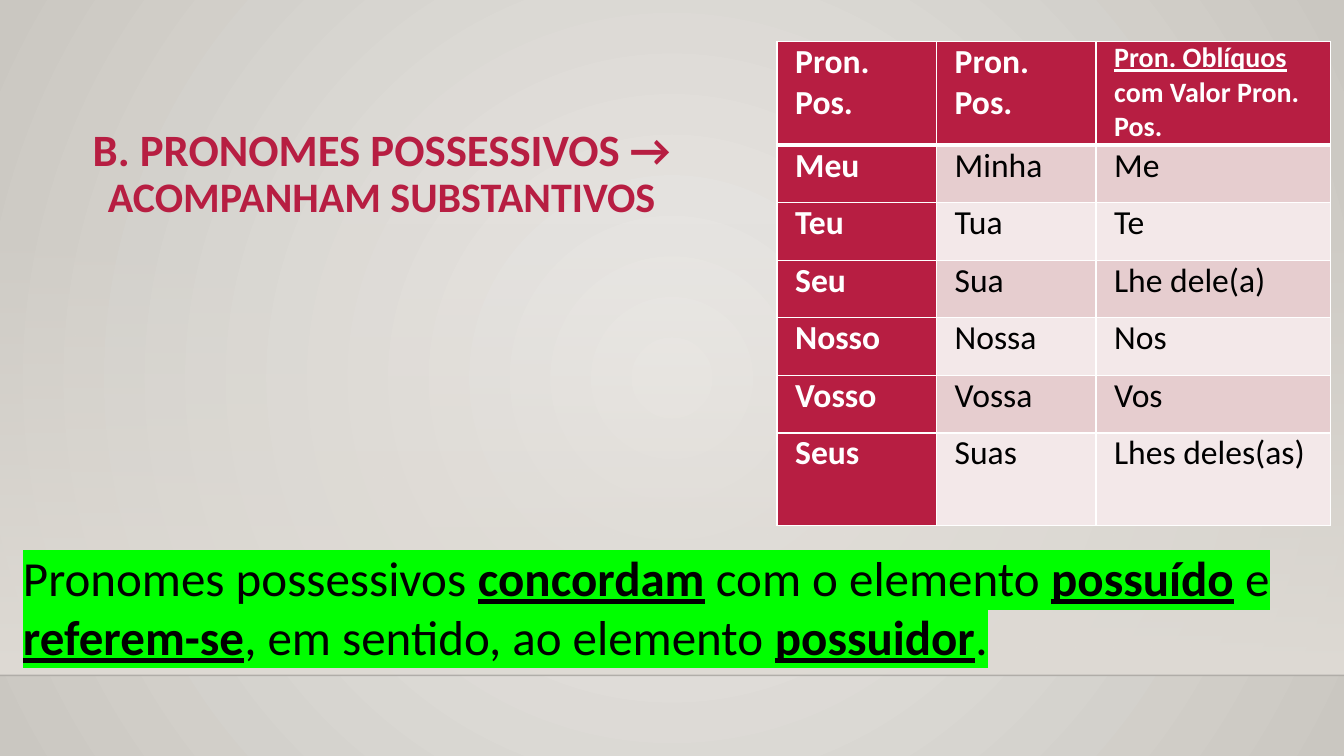
from dataclasses import dataclass

from lxml.etree import SubElement
from pptx import Presentation
from pptx.dml.color import RGBColor
from pptx.enum.shapes import MSO_CONNECTOR, MSO_SHAPE
from pptx.enum.text import MSO_ANCHOR, PP_ALIGN
from pptx.oxml.ns import qn
from pptx.util import Cm, Pt


@dataclass(frozen=True)
class Theme:
    font: str = "Calibri"
    crimson: str = "B71E42"
    white: str = "FFFFFF"
    black: str = "000000"
    marker: str = "00FF00"
    band_dark: str = "E6CDCF"
    band_light: str = "F3E8E9"
    glow: str = "ECEAE7"
    edge: str = "CAC7C1"
    floor: str = "DFDBD5"
    title_size: int = 32
    subtitle_size: int = 30
    rule_size: int = 35
    cell_size: int = 24
    small_size: int = 20


class SlideBuilder:
    def __init__(self, deck, theme):
        self.theme = theme
        self.page = deck.slides.add_slide(deck.slide_layouts[6])

    def gradient(self, fill, first, last):
        fill.gradient()
        for stop, color in zip(fill.gradient_stops, (first, last)):
            stop.color.rgb = RGBColor.from_string(color)

    def background(self):
        """Radial gradient spreading from the centre of the page."""
        self.gradient(self.page.background.fill, self.theme.glow, self.theme.edge)
        gradient = self.page.element.find(".//" + qn("a:gradFill"))
        gradient.remove(gradient.find(qn("a:lin")))
        circle = SubElement(gradient, qn("a:path"), path="circle")
        SubElement(circle, qn("a:fillToRect"), dict.fromkeys("ltrb", "50000"))

    def fading_floor(self, left, top, width, height):
        """Rectangle that fades in from transparent at its top."""
        floor = self.page.shapes.add_shape(
            MSO_SHAPE.RECTANGLE, Cm(left), Cm(top), Cm(width), Cm(height))
        floor.shadow.inherit = False
        floor.line.fill.background()
        self.gradient(floor.fill, self.theme.floor, self.theme.floor)
        floor.fill.gradient_angle = 270
        first_color = floor.element.spPr.find(".//" + qn("a:srgbClr"))
        SubElement(first_color, qn("a:alpha"), val="0")

    def faint_line(self, left, top, right):
        line = self.page.shapes.add_connector(
            MSO_CONNECTOR.STRAIGHT, Cm(left), Cm(top), Cm(right), Cm(top))
        line.line.width = Pt(1)
        line.line.color.rgb = RGBColor.from_string(self.theme.black)
        properties = line.element.spPr
        SubElement(properties.find(".//" + qn("a:srgbClr")), qn("a:alpha"), val="20000")
        SubElement(properties, qn("a:effectLst"))

    def span(self, para, text, size, color, bold=False, underline=False, marker=None):
        span = para.add_run()
        span.text = text
        font = span.font
        font.name, font.size = self.theme.font, Pt(size)
        font.bold, font.underline = bold, underline
        font.color.rgb = RGBColor.from_string(color)
        if marker:
            properties = span._r.get_or_add_rPr()
            highlight = SubElement(properties, qn("a:highlight"))
            SubElement(highlight, qn("a:srgbClr"), val=marker)
            properties.find(qn("a:solidFill")).addnext(highlight)

    def text_box(self, left, top, width, height, anchor=MSO_ANCHOR.TOP):
        """Add a wrapping box and return its first paragraph."""
        box = self.page.shapes.add_textbox(Cm(left), Cm(top), Cm(width), Cm(height))
        box.text_frame.word_wrap = True
        box.text_frame.vertical_anchor = anchor
        return box.text_frame.paragraphs[0]

    def title(self, spans, *place):
        para = self.text_box(*place, anchor=MSO_ANCHOR.MIDDLE)
        para.alignment = PP_ALIGN.CENTER
        para.line_spacing = 0.9
        for text, size in spans:
            self.span(para, text, size, self.theme.crimson, bold=True)

    def rule(self, spans, *place):
        """Highlighted sentence; its key words are bold and underlined."""
        para = self.text_box(*place)
        for text, key in spans:
            self.span(para, text, self.theme.rule_size, self.theme.black,
                      key, key, self.theme.marker)

    def cell(self, cell, spans, color, fill, bold, borders):
        cell.margin_left = cell.margin_right = Cm(0.46)
        cell.margin_top = cell.margin_bottom = 0
        properties = cell._tc.get_or_add_tcPr()
        for side, points in borders.items():
            border = SubElement(properties, qn(f"a:ln{side}"), w=str(Pt(points)))
            paint = SubElement(border, qn("a:solidFill"))
            SubElement(paint, qn("a:srgbClr"), val=self.theme.white)
        cell.fill.solid()
        cell.fill.fore_color.rgb = RGBColor.from_string(fill)
        for text, size, underline in spans:
            self.span(cell.text_frame.paragraphs[0], text, size, color, bold, underline)

    def table(self, header, rows, left, top, widths, heights):
        theme = self.theme
        table = self.page.shapes.add_table(
            len(heights), len(widths), Cm(left), Cm(top),
            Cm(sum(widths)), Cm(sum(heights))).table
        for column, width in zip(table.columns, widths):
            column.width = Cm(width)
        for row, height in zip(table.rows, heights):
            row.height = Cm(height)
        body = [[[(word, theme.cell_size, False)] for word in row] for row in rows]
        for r, row in enumerate([header] + body):
            borders = {"L": 1, "R": 1, "T": 3 if r == 1 else 1, "B": 3 if r == 0 else 1}
            band = theme.band_dark if r % 2 else theme.band_light
            for c, spans in enumerate(row):
                strong = r == 0 or c == 0
                self.cell(table.cell(r, c), spans,
                          theme.white if strong else theme.black,
                          theme.crimson if strong else band, strong, borders)


def main():
    theme = Theme()
    deck = Presentation()
    deck.slide_width, deck.slide_height = Cm(33.87), Cm(19.05)
    slide = SlideBuilder(deck, theme)
    slide.background()
    slide.fading_floor(0, 5.61, 33.87, 11.41)
    slide.faint_line(0, 17.02, 33.87)

    slide.title([("B. PRONOMES POSSESSIVOS → ", theme.title_size),
                 ("ACOMPANHAM SUBSTANTIVOS", theme.subtitle_size)],
                0.33, 0.76, 18.59, 7.3)

    possessive = [("Pron. Pos.", theme.cell_size, False)]
    oblique = [("Pron. Oblíquos ", theme.small_size, True),
               ("com Valor Pron. Pos.", theme.small_size, False)]
    pronouns = [("Meu", "Minha", "Me"),
                ("Teu", "Tua", "Te"),
                ("Seu", "Sua", "Lhe dele(a)"),
                ("Nosso", "Nossa", "Nos"),
                ("Vosso", "Vossa", "Vos"),
                ("Seus", "Suas", "Lhes deles(as)")]
    slide.table([possessive, possessive, oblique], pronouns, 19.58, 1.04,
                widths=[4.02, 4.02, 5.92], heights=[2.62] + [1.45] * 5 + [2.34])

    slide.rule([("Pronomes possessivos ", False), ("concordam", True),
                (" com o elemento ", False), ("possuído", True), (" e ", False),
                ("referem-se", True), (", em sentido, ao elemento ", False),
                ("possuidor", True), (".", False)],
               0.33, 13.67, 33.22, 3.25)
    deck.save("out.pptx")


if __name__ == "__main__":
    main()
